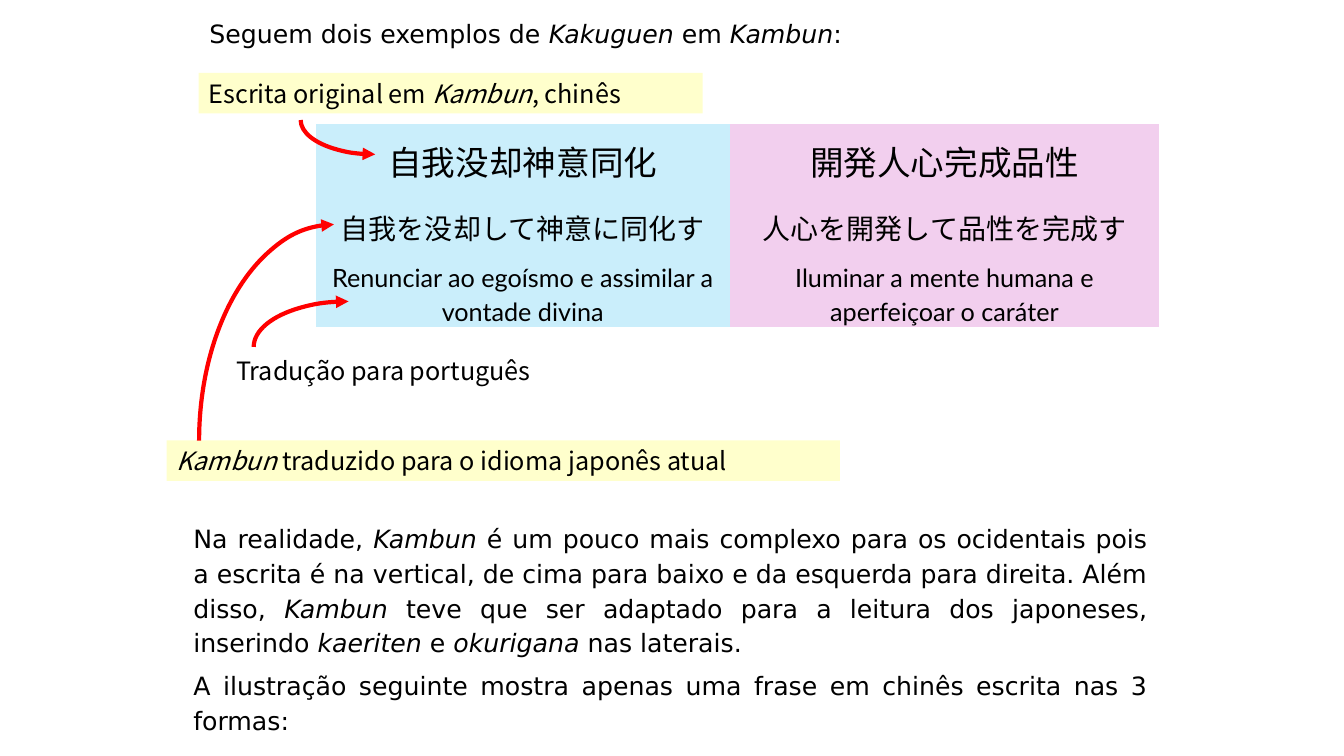
from lxml import etree
from pptx import Presentation
from pptx.dml.color import RGBColor
from pptx.enum.shapes import MSO_SHAPE
from pptx.enum.text import MSO_ANCHOR, MSO_AUTO_SIZE, PP_ALIGN
from pptx.oxml.ns import qn
from pptx.util import Pt

RECT, ARC = MSO_SHAPE.RECTANGLE, MSO_SHAPE.ARC
MIDDLE = MSO_ANCHOR.MIDDLE
GROW = MSO_AUTO_SIZE.SHAPE_TO_FIT_TEXT
LEFT, CENTER, JUSTIFY = PP_ALIGN.LEFT, PP_ALIGN.CENTER, PP_ALIGN.JUSTIFY

BLACK = RGBColor(0x00, 0x00, 0x00)
RED = RGBColor(0xFF, 0x00, 0x00)
YELLOW = RGBColor(0xFF, 0xFF, 0xCC)
BLUE = RGBColor(0xCA, 0xEE, 0xFB)
PINK = RGBColor(0xF2, 0xCF, 0xEE)

SANS, LATO, NOTO = "DejaVu Sans", "Lato", "Noto Sans CJK JP"
PLAIN = "{2D5ABB26-0587-4C30-8999-92F81FD0307C}"  # table style without grid


class Page:
    def __init__(self, deck):
        self.shapes = deck.slides.add_slide(deck.slide_layouts[6]).shapes

    def fill_para(self, para, text, font, size=18, align=LEFT, after=None):
        """Fill a paragraph; words between asterisks are italic."""
        para.alignment = align
        if after is not None:
            para.line_spacing = 1.15
            para.space_after = Pt(after)
        for num, part in enumerate(text.split("*")):
            if not part:
                continue
            run = para.add_run()
            run.text = part
            run.font.size = Pt(size)
            run.font.italic = num % 2 == 1
            run.font.color.rgb = BLACK
            run.font.name = font
            east = etree.SubElement(run.font._element, qn("a:ea"))
            east.set("typeface", font)

    def text(self, box, paras, font, align=LEFT, after=None):
        shape = self.shapes.add_textbox(*map(Pt, box))
        frame = shape.text_frame
        frame.word_wrap = True
        frame.auto_size = GROW
        for num, text in enumerate(paras):
            para = frame.add_paragraph() if num else frame.paragraphs[0]
            self.fill_para(para, text, font, align=align, after=after)

    def label(self, box, text):
        shape = self.shapes.add_shape(RECT, *map(Pt, box))
        shape.shadow.inherit = False
        shape.fill.solid()
        shape.fill.fore_color.rgb = YELLOW
        shape.line.fill.background()
        frame = shape.text_frame
        frame.word_wrap = True
        frame.auto_size = GROW
        frame.vertical_anchor = MIDDLE
        self.fill_para(frame.paragraphs[0], text, NOTO)

    def arrow(self, box, turn, flip=False, end=None):
        shape = self.shapes.add_shape(ARC, *map(Pt, box))
        shape.shadow.inherit = False
        shape.rotation = turn
        if flip:
            shape._element.spPr.xfrm.set("flipV", "1")
        if end is not None:
            shape.adjustments[1] = end
        shape.fill.background()
        shape.line.color.rgb = RED
        shape.line.width = Pt(3)
        head = etree.SubElement(shape.line._get_or_add_ln(), qn("a:tailEnd"))
        head.set("type", "triangle")

    def table(self, left, top, cols, high, fills, rows):
        frame = self.shapes.add_table(len(rows), len(cols), Pt(left), Pt(top),
                                      Pt(sum(cols)), Pt(high * len(rows)))
        grid = frame.table
        grid.first_row = grid.horz_banding = False
        grid._tbl.tblPr.find(qn("a:tableStyleId")).text = PLAIN
        for col, wide in zip(grid.columns, cols):
            col.width = Pt(wide)
        for y, (font, size, texts) in enumerate(rows):
            grid.rows[y].height = Pt(high)
            for x, text in enumerate(texts):
                cell = grid.cell(y, x)
                cell.fill.solid()
                cell.fill.fore_color.rgb = fills[x]
                cell.vertical_anchor = MIDDLE
                cell.margin_left = cell.margin_right = Pt(5.4)
                cell.margin_top = cell.margin_bottom = Pt(0)
                self.fill_para(cell.text_frame.paragraphs[0], text, font,
                               size, CENTER, 10)


def main():
    deck = Presentation()
    deck.slide_width, deck.slide_height = Pt(960), Pt(540)
    page = Page(deck)

    # Opening line
    page.text((142.5, 6, 675.5, 29.5),
              ["Seguem dois exemplos de *Kakuguen* em *Kambun*:"],
              SANS, JUSTIFY, 6)

    # The two maxims
    page.table(225.4, 88.5, (296, 306.5), 47.8, (BLUE, PINK), [
        (NOTO, 24, ("自我没却神意同化", "開発人心完成品性")),
        (NOTO, 20, ("自我を没却して神意に同化す", "人心を開発して品性を完成す")),
        (LATO, 18, ("Renunciar ao egoísmo e assimilar a vontade divina",
                    "Iluminar a mente humana e aperfeiçoar o caráter")),
    ])

    # Labels with their arrows
    page.label((142, 52, 360, 29), "Escrita original em *Kambun*, chinês")
    page.arrow((243.5, 32.5, 49, 106.5), 90, flip=True)
    page.label((119, 314.5, 481, 29),
               "*Kambun* traduzido para o idioma japonês atual")
    page.text((161.5, 250.5, 286.5, 29), ["Tradução para português"], NOTO)
    page.arrow((216.5, 180, 65, 135.5), 270)

    # Closing paragraphs
    page.text((131, 367, 696, 161.5), [
        "Na realidade, *Kambun* é um pouco mais complexo para os ocidentais "
        "pois a escrita é na vertical, de cima para baixo e da esquerda para "
        "direita. Além disso, *Kambun* teve que ser adaptado para a leitura "
        "dos japoneses, inserindo *kaeriten* e *okurigana* nas laterais.",
        "A ilustração seguinte mostra apenas uma frase em chinês escrita nas "
        "3 formas:",
    ], SANS, JUSTIFY, 6)

    # Long arrow to the modern reading
    page.arrow((85, 217.5, 309, 194.5), 270, end=215.79)

    deck.save("out.pptx")


if __name__ == "__main__":
    main()
